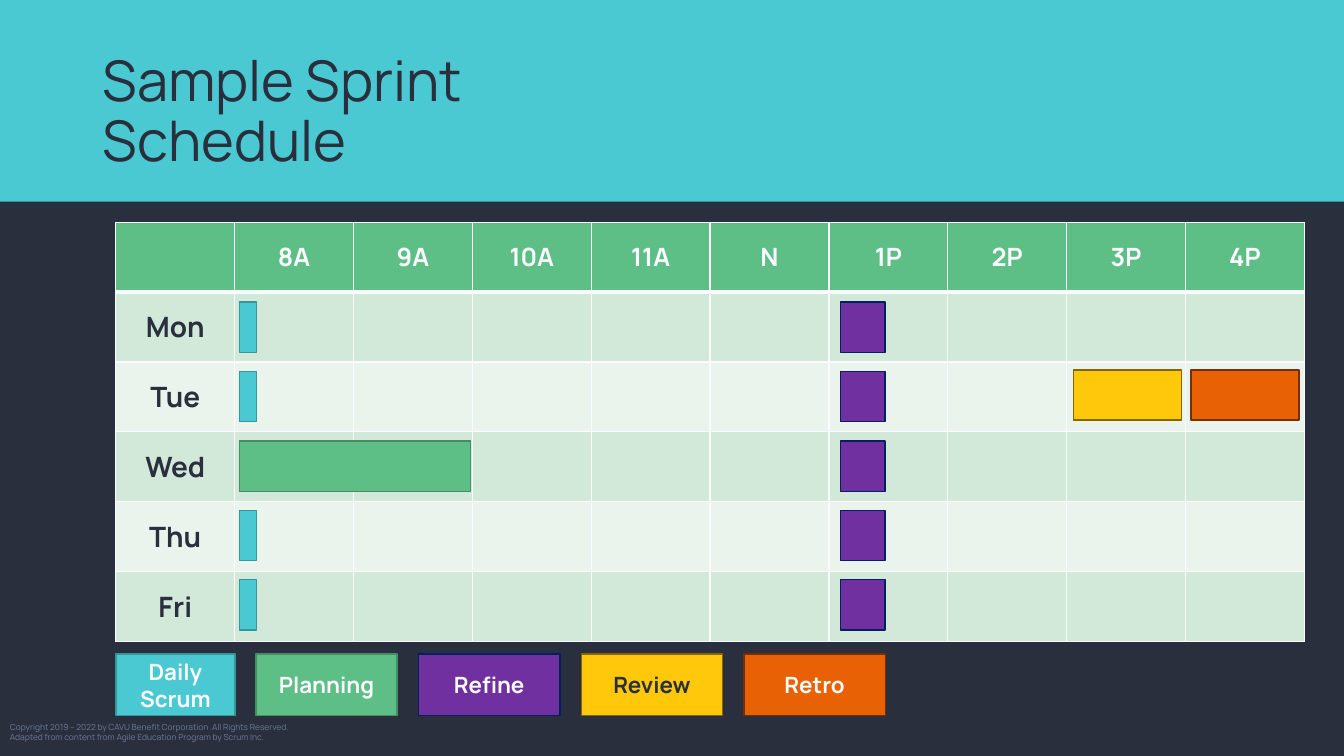
import pptx
import pptx.dml.color
import pptx.enum.shapes
import pptx.enum.text
import pptx.oxml
import pptx.oxml.ns
import pptx.util

Cm = pptx.util.Cm
Pt = pptx.util.Pt
MIDDLE = pptx.enum.text.MSO_ANCHOR.MIDDLE
CENTER = pptx.enum.text.PP_ALIGN.CENTER

DARK, LIGHT, TEAL, GREEN = "2A2F3D", "FAFBFD", "4BC9D3", "5EBF86"


def paint(target, color):
    if hasattr(target, "solid"):
        target.solid()
        target = target.fore_color
    target.rgb = pptx.dml.color.RGBColor.from_string(color)


def add_box(x, y, w, h, fill, line=None):
    sp = s.shapes.add_shape(pptx.enum.shapes.MSO_SHAPE.RECTANGLE, Cm(x), Cm(y), Cm(w), Cm(h))
    sp.shadow.inherit = False
    paint(sp.fill, fill)
    if line:
        paint(sp.line.fill, line)
        sp.line.width = Pt(1)
    else:
        sp.line.fill.background()
    return sp


prs = pptx.Presentation()
prs.slide_width = Cm(33.87)
prs.slide_height = Cm(19.05)
s = prs.slides.add_slide(prs.slide_layouts[6])
paint(s.background.fill, DARK)

add_box(0, 0, 33.87, 5.08, TEAL)

texts = [
    (0, 18.06, 11.43, 0.76, "Copyright 2019 – 2022 by CAVU Benefit Corporation .All Rights Reserved.\n"
     "Adapted from content from Agile Education Program by Scrum Inc.", 6, "6E7A9B", 1),
    (2.34, 1.02, 29.21, 3.68, "Sample Sprint\vSchedule", 40, DARK, 0.9),
]
for x, y, w, h, text, size, color, spacing in texts:
    tf = s.shapes.add_textbox(Cm(x), Cm(y), Cm(w), Cm(h)).text_frame
    tf.word_wrap = True
    tf.vertical_anchor = MIDDLE
    tf.text = text
    for p in tf.paragraphs:
        p.line_spacing = spacing
        for r in p.runs:
            r.font.name = "Manrope"
            r.font.size = Pt(size)
            paint(r.font.color, color)

hours = ["", "8A", "9A", "10A", "11A", "N", "1P", "2P", "3P", "4P"]
days = ["Mon", "Tue", "Wed", "Thu", "Fri"]
table = s.shapes.add_table(6, 10, Cm(2.92), Cm(5.6), Cm(29.95), Cm(10.56)).table
for col in table.columns:
    col.width = Cm(2.995)
for row in table.rows:
    row.height = Cm(1.76)

for i in range(6):
    for j in range(10):
        cell = table.cell(i, j)
        tcPr = cell._tc.get_or_add_tcPr()
        for side in "LRTB":
            thick = (i, side) in [(0, "B"), (1, "T")]
            tcPr.append(pptx.oxml.parse_xml(
                f'<a:ln{side} {pptx.oxml.ns.nsdecls("a")} w="{Pt(3 if thick else 1)}">'
                f'<a:solidFill><a:srgbClr val="{LIGHT}"/></a:solidFill></a:ln{side}>'))
        paint(cell.fill, GREEN if i == 0 else "D2E8D9" if i % 2 else "EAF4ED")
        cell.vertical_anchor = MIDDLE
        text = hours[j] if i == 0 else days[i - 1] if j == 0 else ""
        if text:
            cell.text = text
            p = cell.text_frame.paragraphs[0]
            p.alignment = CENTER
            r = p.runs[0]
            r.font.name = "Manrope"
            r.font.size = Pt(20 if i else 18)
            r.font.bold = True
            paint(r.font.color, DARK if i else LIGHT)

events = {
    "Daily Scrum": (TEAL, "37959C"),
    "Planning": (GREEN, "468D63"),
    "Refine": ("7030A0", "002060"),
    "Review": ("FFC80A", "846700"),
    "Retro": ("E86104", "743002"),
}
for i, (name, colors) in enumerate(events.items()):
    x, w = (2.35 + 4.1 * i, 3.56) if i else (2.92, 3)
    sp = add_box(x, 16.48, w, 1.55, *colors)
    tf = sp.text_frame
    tf.word_wrap = True
    tf.vertical_anchor = MIDDLE
    tf.text = name
    p = tf.paragraphs[0]
    p.alignment = CENTER
    r = p.runs[0]
    r.font.name = "Manrope"
    r.font.size = Pt(16)
    r.font.bold = True
    paint(r.font.color, DARK if name == "Review" else LIGHT)

for i, day in enumerate(days):
    y = 7.61 + 1.75 * i
    if day == "Wed":
        add_box(6.04, y, 5.82, 1.27, *events["Planning"])
    else:
        add_box(6.04, y, 0.43, 1.27, *events["Daily Scrum"])
    add_box(21.18, y, 1.12, 1.27, *events["Refine"])

for x, name in [(27.05, "Review"), (30.02, "Retro")]:
    add_box(x, 9.32, 2.72, 1.27, *events[name])

prs.save("out.pptx")
